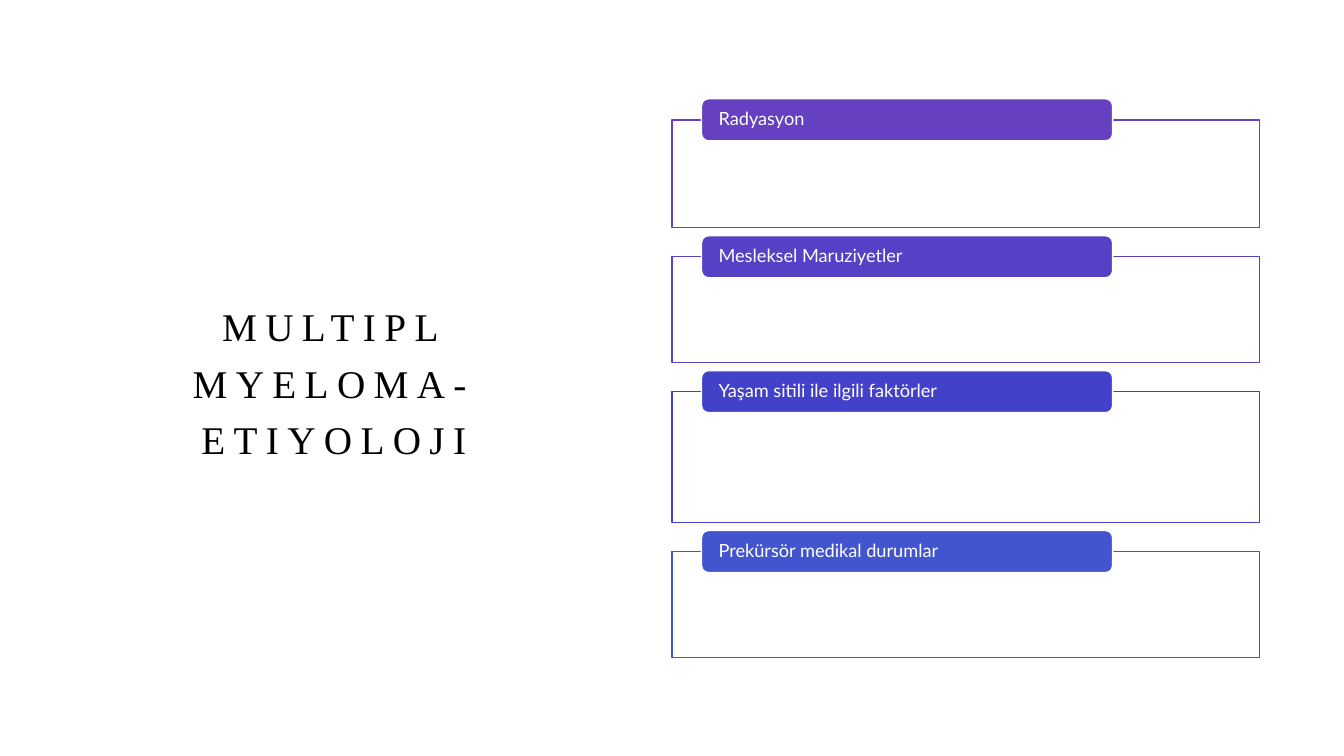
"""Build the slide on the etiology of multiple myeloma."""
import pptx
import pptx.dml.color
import pptx.enum.shapes
import pptx.enum.text
import pptx.util

Cm = pptx.util.Cm
Pt = pptx.util.Pt
SHAPES = pptx.enum.shapes.MSO_SHAPE
ALIGN = pptx.enum.text.PP_ALIGN

COLORS = {
    "text": "000000",
    "white": "FFFFFF",
    "radiation": "6540C1",
    "occupation": "5441C5",
    "lifestyle": "4341CA",
    "precursor": "4254CE",
}


def rgb(name):
    return pptx.dml.color.RGBColor.from_string(COLORS[name])


def write(shape, text, *, font, size, color, align, line_spacing, inset, inset_y=0, tracking=0):
    frame = shape.text_frame
    frame.word_wrap = True
    frame.auto_size = pptx.enum.text.MSO_AUTO_SIZE.NONE
    frame.vertical_anchor = pptx.enum.text.MSO_ANCHOR.MIDDLE
    frame.margin_left = frame.margin_right = Cm(inset)
    frame.margin_top = frame.margin_bottom = Cm(inset_y)
    paragraph = frame.paragraphs[0]
    paragraph.alignment = align
    paragraph.line_spacing = line_spacing
    run = paragraph.add_run()
    run.text = text
    run.font.name = font
    run.font.size = Pt(size)
    run.font.color.rgb = rgb(color)
    if tracking:
        run.font._element.set("spc", str(tracking * 100))


deck = pptx.Presentation()
deck.slide_width = Cm(33.87)
deck.slide_height = Cm(19.05)
slide = deck.slides.add_slide(deck.slide_layouts[5])

heading = slide.shapes.title
heading.left, heading.top, heading.width, heading.height = Cm(3.35), Cm(6.35), Cm(10.13), Cm(6.35)
write(heading, "MULTIPL MYELOMA-ETIYOLOJI", font="Times New Roman", size=28, color="text",
      align=ALIGN.CENTER, line_spacing=1.2, inset=0.25, inset_y=0.13, tracking=6)

FACTORS = [
    ("Radyasyon", "radiation", 2.72),
    ("Mesleksel Maruziyetler", "occupation", 2.67),
    ("Yaşam sitili ile ilgili faktörler", "lifestyle", 3.3),
    ("Prekürsör medikal durumlar", "precursor", 2.67),
]
GAP = 0.73
LABEL_HEIGHT = 1.06

top = 3.02
for factor, color, height in FACTORS:
    panel = slide.shapes.add_shape(SHAPES.RECTANGLE, Cm(16.94), Cm(top), Cm(14.81), Cm(height))
    label = slide.shapes.add_shape(SHAPES.ROUNDED_RECTANGLE, Cm(17.68), Cm(top - LABEL_HEIGHT / 2),
                                   Cm(10.36), Cm(LABEL_HEIGHT))
    for part, fill, line in ((panel, "white", color), (label, color, "white")):
        part.shadow.inherit = False
        part.fill.solid()
        part.fill.fore_color.rgb = rgb(fill)
        part.line.color.rgb = rgb(line)
        part.line.width = Pt(1)
    write(label, factor, font="Lato", size=13, color="white",
          align=ALIGN.LEFT, line_spacing=0.9, inset=0.38)
    top += height + GAP

deck.save("out.pptx")
